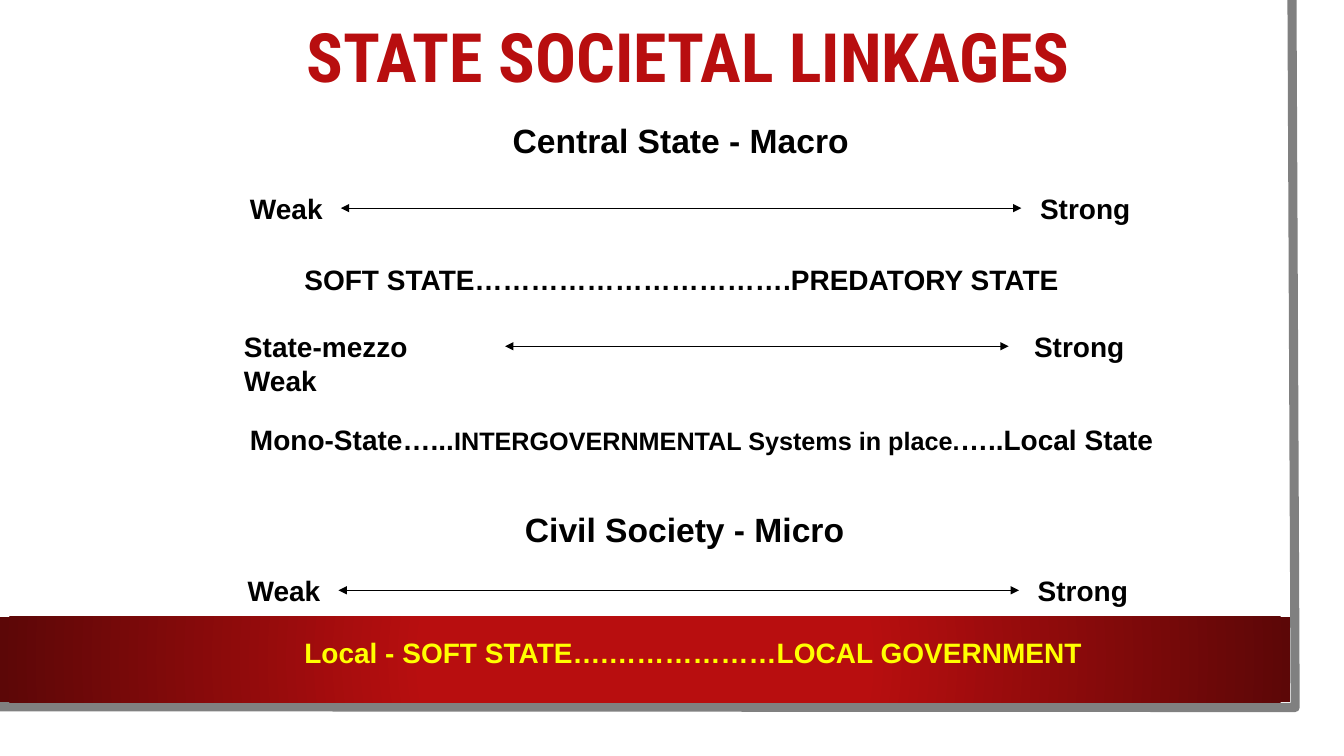
from lxml.etree import SubElement
from pptx import Presentation
from pptx.dml.color import RGBColor
from pptx.enum.shapes import MSO_CONNECTOR, MSO_SHAPE
from pptx.enum.text import MSO_ANCHOR
from pptx.oxml import parse_xml
from pptx.oxml.ns import nsdecls, qn
from pptx.util import Cm, Pt

RED, DARK_RED, YELLOW = "B80E0F", "5C0707", "FFFF00"
BLACK, WHITE, GREY = "000000", "FFFFFF", "808080"
LABEL_HEIGHT = 1.09


def rgb(value):
    return RGBColor.from_string(value)


def add_text(shapes, text, left, top, width, height=LABEL_HEIGHT, size=20,
             color=BLACK, font="Arial", anchor=MSO_ANCHOR.TOP, spacing=1.0):
    tb = shapes.add_textbox(Cm(left), Cm(top), Cm(width), Cm(height))
    tf = tb.text_frame
    tf.word_wrap = False
    tf.vertical_anchor = anchor
    p = tf.paragraphs[0]
    p.line_spacing = spacing
    runs = [(text, size)] if isinstance(text, str) else text
    for run_text, run_size in runs:
        r = p.add_run()
        r.text = run_text
        r.font.name = font
        r.font.size = Pt(run_size)
        r.font.bold = True
        r.font.color.rgb = rgb(color)


def add_rect(shapes, left, top, width, height, color):
    sp = shapes.add_shape(MSO_SHAPE.RECTANGLE, Cm(left), Cm(top), Cm(width), Cm(height))
    sp.shadow.inherit = False
    sp.fill.solid()
    sp.fill.fore_color.rgb = rgb(color)
    sp.line.fill.background()
    return sp


def add_double_arrow(shapes, x1, x2, y):
    line = shapes.add_connector(MSO_CONNECTOR.STRAIGHT, Cm(x1), Cm(y), Cm(x2), Cm(y))
    line.line.color.rgb = rgb(BLACK)
    line.line.width = Pt(0.75)
    ln = line.line._get_or_add_ln()
    for end in ("a:headEnd", "a:tailEnd"):
        SubElement(ln, qn(end), type="triangle")
    SubElement(line._element.spPr, qn("a:effectLst"))


def draw_frame(shapes, width, height):
    add_rect(shapes, 0, 0, 33.27, 18.47, WHITE)
    builder = shapes.build_freeform(Cm(width - 0.08), 0)
    builder.add_line_segments(
        [(Cm(width), Cm(height)), (Cm(-0.08), Cm(height - 0.02))], close=False)
    edge = builder.convert_to_shape()
    edge.shadow.inherit = False
    edge.fill.background()
    edge.line.color.rgb = rgb(GREY)
    edge.line.width = Pt(6.5)


def draw_band(shapes, left, top, width, height):
    sp = add_rect(shapes, left, top, width, height, RED)
    solid = sp._element.spPr.find(qn("a:solidFill"))
    gradient = parse_xml(
        f'<a:gradFill {nsdecls("a")} rotWithShape="1"><a:gsLst>'
        f'<a:gs pos="34000"><a:srgbClr val="{RED}"/></a:gs>'
        f'<a:gs pos="100000"><a:srgbClr val="{DARK_RED}"/></a:gs></a:gsLst>'
        '<a:path path="circle"><a:fillToRect l="50000" t="50000" r="50000" b="50000"/>'
        '</a:path></a:gradFill>')
    sp._element.spPr.replace(solid, gradient)


def draw_scale(slide, left, top, width, weak="Weak", weak_width=2.36, end_gap=0.22):
    shapes = slide.shapes.add_group_shape().shapes
    strong_width = 2.79
    strong_left = left + width - strong_width
    add_text(shapes, weak, left, top, weak_width)
    add_text(shapes, "Strong", strong_left, top, strong_width)
    add_double_arrow(shapes, left + weak_width + 0.18, strong_left - end_gap,
                     top + LABEL_HEIGHT / 2)


def draw_central_state(slide, left, top, width):
    add_text(slide.shapes, "Central State - Macro", left + 6.62, top, 9.09, 1.27, size=24)
    draw_scale(slide, left, top + 1.8, width)
    add_text(slide.shapes, "SOFT STATE…………………………….PREDATORY STATE",
             left + 1.37, top + 3.58, 19.81)


def draw_mezzo_state(slide, left, top, width):
    draw_scale(slide, left, top, width, "State-mezzo Weak", 6.65, end_gap=0.39)
    add_text(slide.shapes, [("Mono-State…...", 20),
                            ("INTERGOVERNMENTAL Systems in place.", 18),
                            ("…..Local State", 20)],
             left + 0.15, top + 2.34, 23.29)


def draw_civil_society(slide, left, top, width):
    add_text(slide.shapes, "Civil Society - Micro", left + 6.99, top, 8.56, 1.27, size=24)
    draw_scale(slide, left, top + 1.63, width)
    add_text(slide.shapes, "Local - SOFT STATE….………………LOCAL GOVERNMENT",
             left + 1.43, top + 3.18, 20.19, color=YELLOW)


def main():
    prs = Presentation()
    prs.slide_width, prs.slide_height = Cm(33.87), Cm(19.05)
    slide = prs.slides.add_slide(prs.slide_layouts[6])
    draw_frame(slide.shapes, 32.64, 17.83)
    draw_band(slide.shapes, 0, 15.54, 32.51, 2.16)
    add_text(slide.shapes, "STATE SOCIETAL LINKAGES", 7.47, 0.64, 20.4, 1.78, size=48.6,
             color=RED, font="Roboto Condensed", anchor=MSO_ANCHOR.MIDDLE, spacing=0.9)
    draw_central_state(slide, 6.05, 2.9, 22.7)
    draw_mezzo_state(slide, 5.9, 8.18, 22.7)
    draw_civil_society(slide, 5.99, 12.7, 22.7)
    prs.save("out.pptx")


if __name__ == "__main__":
    main()
